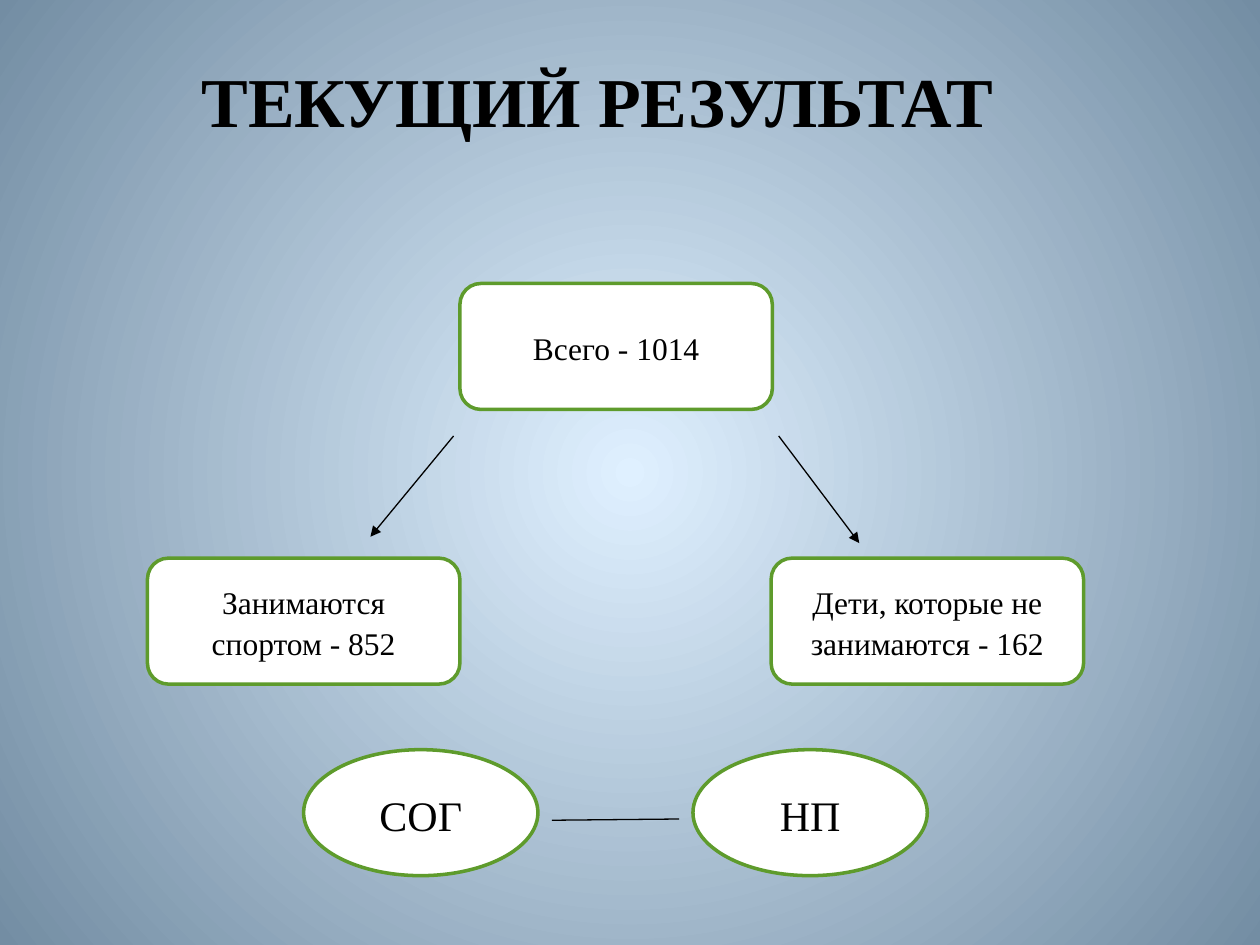
from lxml.etree import SubElement
from pptx import Presentation
from pptx.dml.color import RGBColor
from pptx.enum.shapes import MSO_CONNECTOR, MSO_SHAPE
from pptx.enum.text import MSO_ANCHOR, MSO_AUTO_SIZE, PP_ALIGN
from pptx.oxml.ns import qn
from pptx.util import Inches, Pt

# Content
TITLE = "ТЕКУЩИЙ РЕЗУЛЬТАТ"
BOXES = [  # text, left, top
    ("Всего - 1014", 3.65, 2.25),
    ("Занимаются спортом - 852", 1.17, 4.43),
    ("Дети, которые не занимаются - 162", 6.12, 4.43),
]
GROUPS = [("СОГ", 2.41, 5.95), ("НП", 5.5, 5.95)]
LINKS = [  # start, end, has arrowhead
    ((6.18, 3.46), (6.82, 4.31), True),
    ((3.6, 3.46), (2.94, 4.26), True),
    ((4.38, 6.51), (5.39, 6.5), False),
]

# Style
FONT = "Times New Roman"
BLACK, WHITE, GREEN = "000000", "FFFFFF", "5E9B2C"
GLOW, EDGE = "DFF0FF", "738DA3"
BOX_SIZE, GROUP_SIZE = (2.48, 1), (1.86, 1)


def rgb(value):
    return RGBColor.from_string(value)


def write(frame, text, size, bold=False):
    frame.text = text
    frame.word_wrap = True
    frame.vertical_anchor = MSO_ANCHOR.MIDDLE
    paragraph = frame.paragraphs[0]
    paragraph.alignment = PP_ALIGN.CENTER
    font = paragraph.runs[0].font
    font.name, font.size, font.bold = FONT, Pt(size), bold
    font.color.rgb = rgb(BLACK)


def add_node(slide, preset, text, left, top, size, text_size):
    node = slide.shapes.add_shape(preset, *map(Inches, (left, top, *size)))
    node.shadow.inherit = False
    node.fill.solid()
    node.fill.fore_color.rgb = rgb(WHITE)
    node.line.color.rgb = rgb(GREEN)
    node.line.width = Pt(2)
    write(node.text_frame, text, text_size)
    node.text_frame.paragraphs[0].line_spacing = 1.07


def add_link(slide, start, end, arrow):
    link = slide.shapes.add_connector(
        MSO_CONNECTOR.STRAIGHT, *map(Inches, (*start, *end)))
    link.line.color.rgb = rgb(BLACK)
    link.line.width = Pt(0.75)
    if arrow:
        SubElement(link.line._get_or_add_ln(), qn("a:tailEnd"), type="triangle")
    SubElement(link.element.spPr, qn("a:effectLst"))


def set_background(slide):
    fill = slide.background.fill
    fill.gradient()
    for stop, color in zip(fill.gradient_stops, (GLOW, EDGE)):
        stop.color.rgb = rgb(color)
    # Radial gradient from the centre
    gradient = slide.element.find(".//" + qn("a:gradFill"))
    gradient.remove(gradient.find(qn("a:lin")))
    circle = SubElement(gradient, qn("a:path"))
    circle.set("path", "circle")
    SubElement(circle, qn("a:fillToRect"), dict.fromkeys("ltrb", "50000"))


def main():
    deck = Presentation()
    deck.slide_width, deck.slide_height = Inches(10), Inches(7.5)
    slide = deck.slides.add_slide(deck.slide_layouts[5])
    set_background(slide)

    # Title
    title = slide.shapes.title
    title.left, title.top = Inches(0.54), Inches(0.37)
    title.width, title.height = Inches(8.4), Inches(0.98)
    write(title.text_frame, TITLE, 40, bold=True)
    title.text_frame.auto_size = MSO_AUTO_SIZE.NONE
    title.text_frame.margin_bottom = Inches(0.19)

    # Diagram
    for text, left, top in BOXES:
        add_node(slide, MSO_SHAPE.ROUNDED_RECTANGLE, text, left, top, BOX_SIZE, 18)
    for text, left, top in GROUPS:
        add_node(slide, MSO_SHAPE.OVAL, text, left, top, GROUP_SIZE, 24)
    for start, end, arrow in LINKS:
        add_link(slide, start, end, arrow)

    deck.save("out.pptx")


if __name__ == "__main__":
    main()
